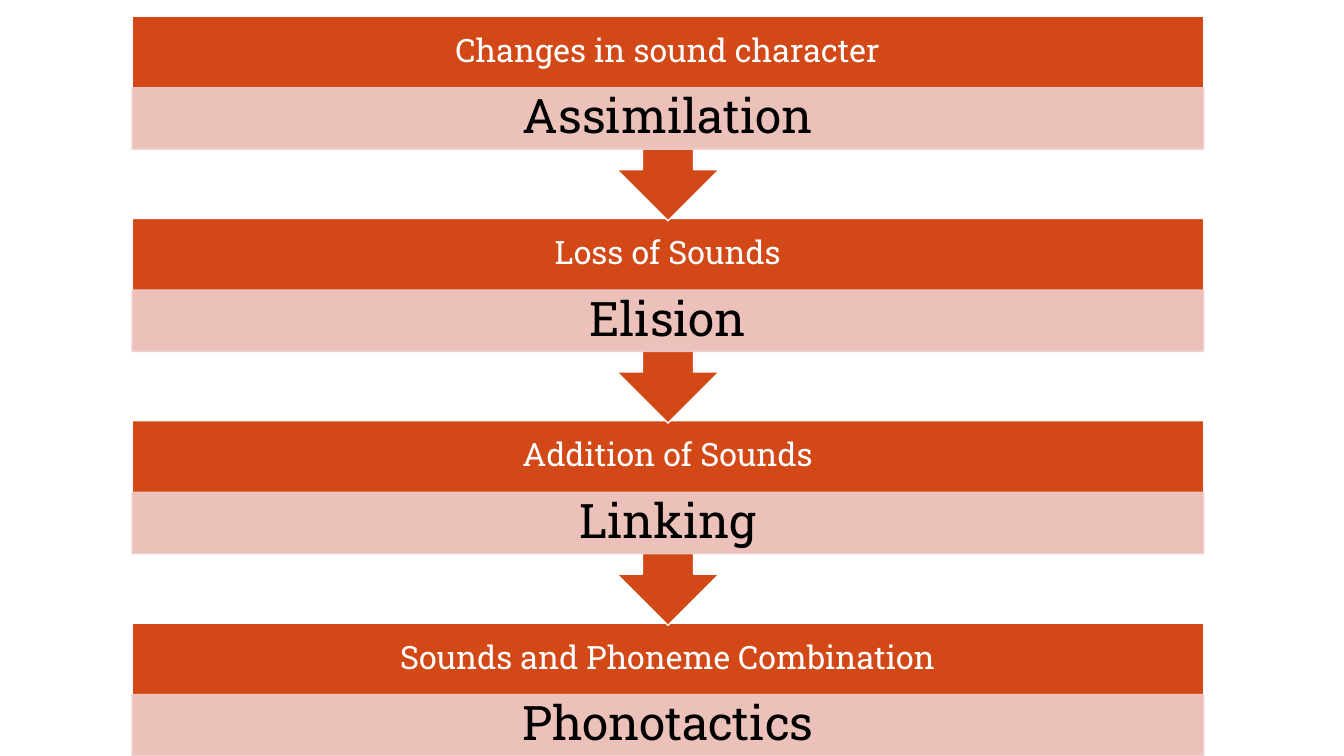
from pptx import Presentation
from pptx.dml.color import RGBColor
from pptx.enum import shapes, text
from pptx.oxml import ns
from pptx.util import Inches, Pt
from lxml import etree

ORANGE = RGBColor(0xD3, 0x48, 0x17)
PINK = RGBColor(0xEF, 0xCF, 0xCC)
WHITE = RGBColor(0xFF, 0xFF, 0xFF)
BLACK = RGBColor(0, 0, 0)

LEFT, WIDTH = Inches(1.31), Inches(10.63)
FIRST_TOP, LAST_TOP = 0.16, 6.18
HEADER_HEIGHT, TERM_HEIGHT = 0.71, 0.61
BLOCK_HEIGHT = HEADER_HEIGHT + TERM_HEIGHT
CALLOUT_HEIGHT = 2.03

STEPS = [
    ("Changes in sound character", "Assimilation"),
    ("Loss of Sounds", "Elision"),
    ("Addition of Sounds", "Linking"),
    ("Sounds and Phoneme Combination", "Phonotactics"),
]


def add_block(page, kind, top, height, fill, outline):
    block = page.shapes.add_shape(kind, LEFT, Inches(top), WIDTH, Inches(height))
    block.shadow.inherit = False
    block.fill.solid()
    block.fill.fore_color.rgb = fill
    block.line.color.rgb = outline
    block.line.width = Pt(1)
    return block


def write_text(box, content, size, color, side, edge):
    frame = box.text_frame
    frame.word_wrap = True
    frame.vertical_anchor = text.MSO_ANCHOR.MIDDLE
    frame.margin_left = frame.margin_right = Inches(side)
    frame.margin_top = frame.margin_bottom = Inches(edge)
    para = frame.paragraphs[0]
    para.alignment = text.PP_ALIGN.CENTER
    para.line_spacing = 0.9
    span = para.add_run()
    span.text = content
    span.font.name = "Roboto Slab"
    span.font.size = Pt(size)
    span.font.color.rgb = color


deck = Presentation()
deck.slide_width = Inches(13.33)
deck.slide_height = Inches(7.5)
page = deck.slides.add_slide(deck.slide_layouts[6])

last = len(STEPS) - 1
pitch = (LAST_TOP - FIRST_TOP) / last

for index, (change, term) in reversed(list(enumerate(STEPS))):
    top = FIRST_TOP + index * pitch
    if index == last:
        add_block(page, shapes.MSO_SHAPE.RECTANGLE, top, BLOCK_HEIGHT, ORANGE, WHITE)
    else:
        callout = add_block(page, shapes.MSO_SHAPE.UP_ARROW_CALLOUT, top,
                            CALLOUT_HEIGHT, ORANGE, WHITE)
        callout.rotation = 180

    header = page.shapes.add_textbox(LEFT, Inches(top), WIDTH, Inches(HEADER_HEIGHT))
    write_text(header, change, size=23, color=WHITE, side=0.18, edge=0.18)

    band = add_block(page, shapes.MSO_SHAPE.RECTANGLE, top + HEADER_HEIGHT,
                     TERM_HEIGHT, PINK, PINK)
    for color in band._element.spPr.iter(ns.qn("a:srgbClr")):
        etree.SubElement(color, ns.qn("a:alpha"), val="90000")
    write_text(band, term, size=34, color=BLACK, side=0.26, edge=0.05)

deck.save("out.pptx")
